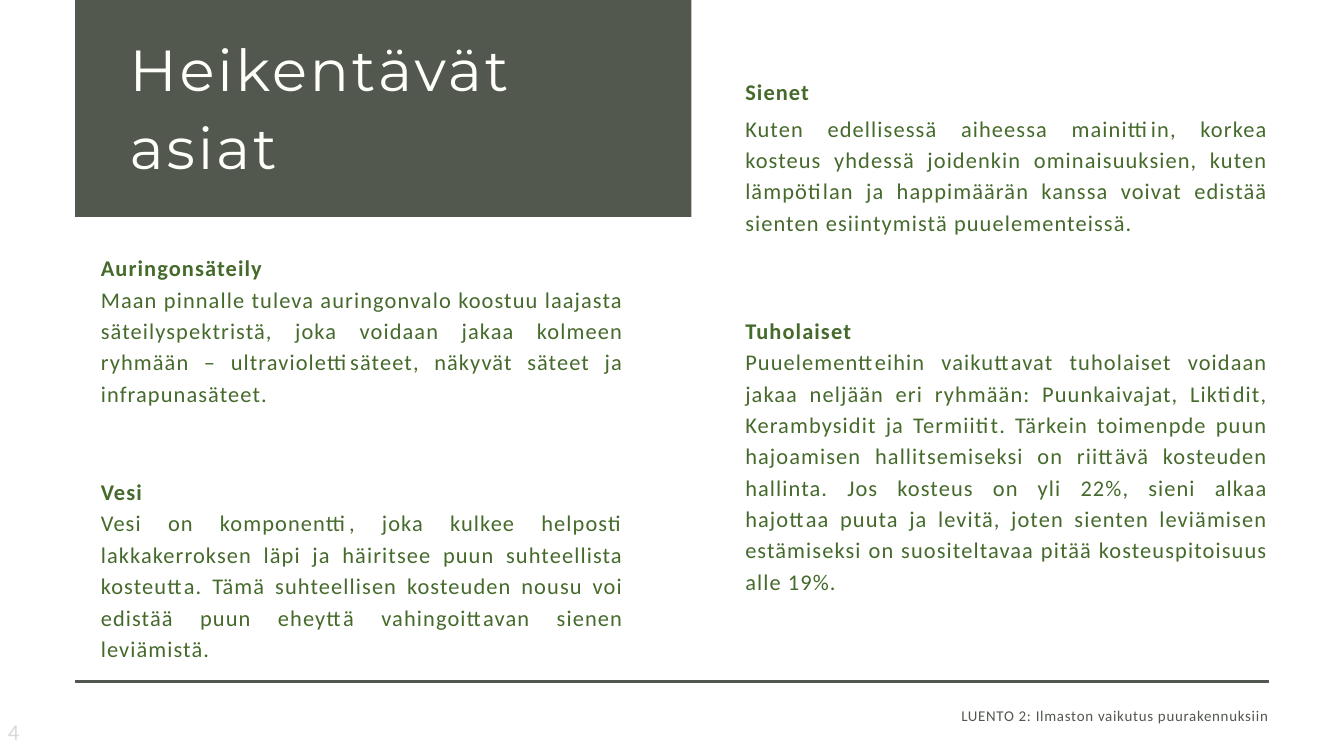
from dataclasses import dataclass

from pptx import Presentation, util as u
from pptx.dml.color import RGBColor
from pptx.enum import shapes, text

# Grid: 20 columns by 11.25 rows of one-inch cells
COLUMNS, ROWS = 20, 11.25
CELL = u.Inches(1)
LEFT_EDGE, RIGHT_EDGE = 1.12, 18.87
LEFT_COLUMN, RIGHT_COLUMN, COLUMN_WIDTH = 1.5, 11.09, 7.78

SLATE, GREEN, CREAM, GREY = "52584D", "456A2C", "FEFFF8", "D9D9D9"


@dataclass(frozen=True)
class Area:
    left: float
    top: float
    width: float
    height: float

    def lengths(self) -> list[int]:
        return [round(n * CELL) for n in (self.left, self.top, self.width, self.height)]


@dataclass(frozen=True)
class Style:
    size: float
    color: str
    spacing: float  # between letters, in points
    leading: float | None = None
    font: str = "Calibri"


@dataclass(frozen=True)
class Topic:
    area: Area
    heading: str
    body: str
    space_after: float = 0


BODY = Style(24, GREEN, 1.2, 33.6)
TITLE = Style(62, CREAM, 3.1, 83.7, "Montserrat")
FOOTER = Style(16, SLATE, 0.8, 22.4)
NUMBER = Style(24, GREY, 1.2)

TOPICS = [
    Topic(Area(RIGHT_COLUMN, 1.09, COLUMN_WIDTH, 2.43), "Sienet",
          "Kuten edellisessä aiheessa mainittiin, korkea kosteus yhdessä joidenkin "
          "ominaisuuksien, kuten lämpötilan ja happimäärän kanssa voivat edistää "
          "sienten esiintymistä puuelementeissä.", space_after=6),
    Topic(Area(RIGHT_COLUMN, 4.65, COLUMN_WIDTH, 4.73), "Tuholaiset",
          "Puuelementteihin vaikuttavat tuholaiset voidaan jakaa neljään eri ryhmään: "
          "Puunkaivajat, Liktidit, Kerambysidit ja Termiitit. Tärkein toimenpde puun "
          "hajoamisen hallitsemiseksi on riittävä kosteuden hallinta. Jos kosteus on "
          "yli 22%, sieni alkaa hajottaa puuta ja levitä, joten sienten leviämisen "
          "estämiseksi on suositeltavaa pitää kosteuspitoisuus alle 19%."),
    Topic(Area(LEFT_COLUMN, 3.72, COLUMN_WIDTH, 2.35), "Auringonsäteily",
          "Maan pinnalle tuleva auringonvalo koostuu laajasta säteilyspektristä, joka "
          "voidaan jakaa kolmeen ryhmään – ultraviolettisäteet, näkyvät säteet ja "
          "infrapunasäteet."),
    Topic(Area(LEFT_COLUMN, 7.05, COLUMN_WIDTH, 2.83), "Vesi",
          "Vesi on komponentti, joka kulkee helposti lakkakerroksen läpi ja häiritsee "
          "puun suhteellista kosteutta. Tämä suhteellisen kosteuden nousu voi edistää "
          "puun eheyttä vahingoittavan sienen leviämistä."),
]


def color(value: str) -> RGBColor:
    return RGBColor.from_string(value)


def add_block(page, area: Area, outlined: bool = False):
    block = page.shapes.add_shape(shapes.MSO_SHAPE.RECTANGLE, *area.lengths())
    block.shadow.inherit = False
    block.fill.solid()
    block.fill.fore_color.rgb = color(SLATE)
    if outlined:
        block.line.color.rgb = color(SLATE)
        block.line.width = u.Pt(0.75)
    else:
        block.line.fill.background()
    return block


def prepare_frame(box, margin: float = 0, anchor=text.MSO_ANCHOR.TOP):
    frame = box.text_frame
    frame.word_wrap = True
    frame.vertical_anchor = anchor
    frame.margin_left = frame.margin_right = u.Inches(margin)
    frame.margin_top = frame.margin_bottom = u.Inches(margin / 2)
    return frame


def write(para, words: str, style: Style, align=text.PP_ALIGN.LEFT,
          bold: bool = False, space_after: float = 0) -> None:
    para.alignment = align
    para.space_after = u.Pt(space_after)
    if style.leading:
        para.line_spacing = u.Pt(style.leading)
    span = para.add_run()
    span.text = words
    span.font.name = style.font
    span.font.size = u.Pt(style.size)
    span.font.bold = bold
    span.font.color.rgb = color(style.color)
    span._r.get_or_add_rPr().set("spc", str(round(style.spacing * 100)))


def add_topic(page, topic: Topic) -> None:
    frame = prepare_frame(page.shapes.add_textbox(*topic.area.lengths()))
    write(frame.paragraphs[0], topic.heading, BODY, bold=True,
          space_after=topic.space_after)
    write(frame.add_paragraph(), topic.body, BODY, text.PP_ALIGN.JUSTIFY,
          space_after=topic.space_after)


def main() -> None:
    deck = Presentation()
    deck.slide_width, deck.slide_height = round(COLUMNS * CELL), round(ROWS * CELL)
    page = deck.slides.add_slide(deck.slide_layouts[6])

    # Title panel
    add_block(page, Area(LEFT_EDGE, -0.34, 9.17, 3.57))
    title = add_block(page, Area(1.93, 0.37, 7.56, 2.32))
    write(prepare_frame(title).paragraphs[0], "Heikentävät asiat", TITLE)

    # Topics in two columns
    for topic in TOPICS:
        add_topic(page, topic)

    # Footer rule, lecture name and page number
    add_block(page, Area(LEFT_EDGE, 10.12, RIGHT_EDGE - LEFT_EDGE, 0.04), outlined=True)
    footer = page.shapes.add_textbox(*Area(10.56, 10.47, 8.32, 0.29).lengths())
    write(prepare_frame(footer).paragraphs[0],
          "LUENTO 2: Ilmaston vaikutus puurakennuksiin", FOOTER, text.PP_ALIGN.RIGHT)
    number = page.shapes.add_textbox(*Area(0.02, 10.69, 2.33, 0.4).lengths())
    write(prepare_frame(number, 0.1, text.MSO_ANCHOR.MIDDLE).paragraphs[0], "4", NUMBER)

    deck.save("out.pptx")


if __name__ == "__main__":
    main()
